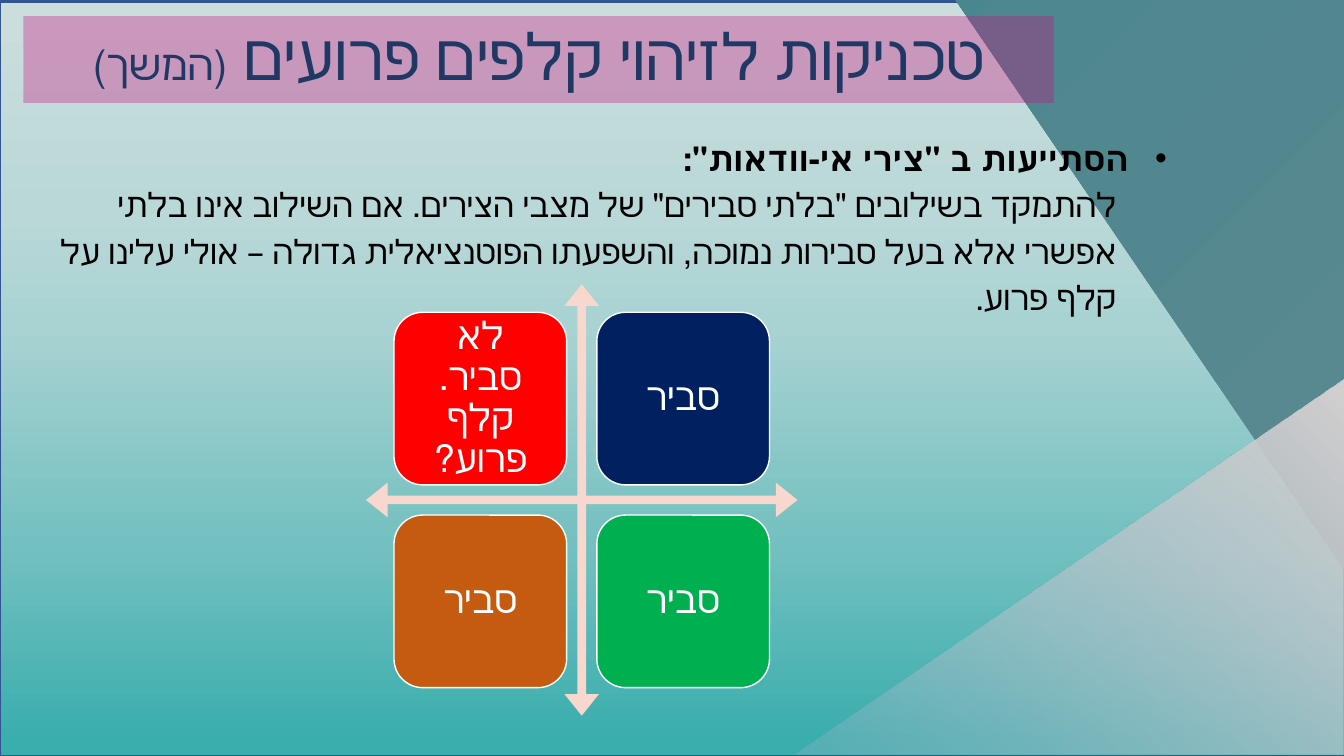
from itertools import product

from lxml.etree import SubElement
from pptx import Presentation
from pptx.dml.color import RGBColor
from pptx.enum.shapes import MSO_SHAPE
from pptx.enum.text import MSO_ANCHOR, PP_ALIGN
from pptx.oxml.ns import qn
from pptx.util import Inches, Pt

SLIDE = (0, 0, 13.33, 7.5)
COLORS = {
    "frame": "325491", "banner": "CA0C7D", "title": "203864",
    "text": "000000", "white": "FFFFFF", "arrows": "F8D7CE",
    "red": "FF0000", "navy": "002060", "orange": "C55A11", "green": "00B050",
}
PANEL_STOPS = [(2, "3AADAD"), (28, "74C0C0"), (57, "A9D2D2"), (72, "BAD8D8"), (98, "CBDDDD")]
TEAL_STOPS = [(2, "5A8890"), (95, "4F878F"), (97, "49878E")]
PALE_STOPS = [(1, "ADB9CA", 22), (97, "D0CECE")]
TILES = [("לא סביר. קלף פרוע?", "red"), ("סביר", "navy"), ("סביר", "orange"), ("סביר", "green")]


def part(box, left, top, width, height):
    """Return the box that takes the given percentages of another box."""
    x, y, w, h = box
    return (x + w * left / 100, y + h * top / 100, w * width / 100, h * height / 100)


def add_shape(page, kind, box, fill=None, line=None):
    """Add a preset shape without shadow, with optional fill and 1 pt line."""
    shape = page.shapes.add_shape(kind, *map(Inches, box))
    shape.shadow.inherit = False
    if fill:
        shape.fill.solid()
        shape.fill.fore_color.rgb = RGBColor.from_string(COLORS[fill])
    if line:
        shape.line.color.rgb = RGBColor.from_string(COLORS[line])
        shape.line.width = Pt(1)
    else:
        shape.line.fill.background()
    return shape


def set_opacity(color, percent):
    """Set the opacity of a colour element."""
    SubElement(color, qn("a:alpha")).set("val", str(percent * 1000))


def set_gradient(shape, stops, angle):
    """Fill a shape with a linear gradient, its angle measured clockwise."""
    shape.fill.gradient()
    shape.fill.gradient_angle = 360 - angle
    stop_list = shape.element.spPr.find(qn("a:gradFill")).find(qn("a:gsLst"))
    for stop in list(stop_list):
        stop_list.remove(stop)
    for position, color, *opacity in stops:
        stop = SubElement(stop_list, qn("a:gs"))
        stop.set("pos", str(position * 1000))
        value = SubElement(stop, qn("a:srgbClr"))
        value.set("val", color)
        for percent in opacity:
            set_opacity(value, percent)


def format_paragraph(para, align, spacing, margin=0, bullet=None):
    """Make a right-to-left paragraph with an optional hanging bullet."""
    properties = para._p.get_or_add_pPr()
    properties.set("rtl", "1")
    properties.set("marL", str(Inches(margin)))
    properties.set("indent", str(Inches(-margin if bullet else 0)))
    para.alignment = align
    para.line_spacing = spacing
    if bullet:
        SubElement(properties, qn("a:buFont")).set("typeface", "Arial")
        SubElement(properties, qn("a:buChar")).set("char", bullet)


def add_span(para, text, size, color, font="Calibri", bold=False):
    """Add a formatted run of text to a paragraph."""
    span = para.add_run()
    span.text = text
    span.font.size = Pt(size)
    span.font.name = font
    span.font.bold = bold
    span.font.color.rgb = RGBColor.from_string(COLORS[color])


def add_backdrop(page, box):
    """Draw the gradient panels and the two corner triangles."""
    for top in (0, 0.27):
        panel = add_shape(page, MSO_SHAPE.RECTANGLE, part(box, 0, top, 100, 99.73), line="frame")
        set_gradient(panel, PANEL_STOPS, 270)
    for area, rotation, stops in (
        ((71.1, 0, 28.96, 75.6), 180, TEAL_STOPS),
        ((65.57, 38.4, 28.06, 72.93), 270, PALE_STOPS),
    ):
        corner = add_shape(page, MSO_SHAPE.ISOSCELES_TRIANGLE, part(box, *area))
        corner.adjustments[0] = 0
        corner.rotation = rotation
        set_gradient(corner, stops, 45)


def add_title(page, box):
    """Draw the translucent title banner."""
    banner = add_shape(page, MSO_SHAPE.RECTANGLE, box, fill="banner")
    set_opacity(banner.element.spPr.find(qn("a:solidFill"))[0], 33)
    frame = banner.text_frame
    frame.word_wrap = True
    frame.vertical_anchor = MSO_ANCHOR.MIDDLE
    para = frame.paragraphs[0]
    format_paragraph(para, PP_ALIGN.CENTER, 0.9)
    add_span(para, "טכניקות לזיהוי קלפים פרועים ", 46, "title")
    add_span(para, "(המשך)", 30, "title")


def add_body(page, box):
    """Write the bulleted heading and its explanation."""
    frame = page.shapes.add_textbox(*map(Inches, box)).text_frame
    frame.word_wrap = True
    heading = frame.paragraphs[0]
    format_paragraph(heading, PP_ALIGN.RIGHT, 1.15, margin=0.38, bullet="•")
    add_span(heading, 'הסתייעות ב "צירי אי-וודאות": ', 24, "text", "Times New Roman", bold=True)
    detail = frame.add_paragraph()
    format_paragraph(detail, PP_ALIGN.RIGHT, 1.15, margin=0.5)
    add_span(
        detail,
        'להתמקד בשילובים "בלתי סבירים" של מצבי הצירים. אם השילוב אינו בלתי אפשרי '
        "אלא בעל סבירות נמוכה, והשפעתו הפוטנציאלית גדולה – אולי עלינו על קלף פרוע.",
        24, "text", "Times New Roman",
    )


def add_matrix(page, box):
    """Draw the crossed axes with a tile in each quadrant."""
    axes = add_shape(page, MSO_SHAPE.QUAD_ARROW, box, fill="arrows")
    for index, value in enumerate((0.02, 0.04, 0.05)):
        axes.adjustments[index] = value
    for (row, column), (text, color) in zip(product(range(2), repeat=2), TILES):
        area = part(box, 6.5 + 47 * column, 6.5 + 47 * row, 40, 40)
        tile = add_shape(page, MSO_SHAPE.ROUNDED_RECTANGLE, area, fill=color, line="white")
        frame = tile.text_frame
        frame.word_wrap = True
        frame.vertical_anchor = MSO_ANCHOR.MIDDLE
        frame.margin_left = frame.margin_right = Inches(0.11)
        frame.margin_top = frame.margin_bottom = Inches(0.11)
        para = frame.paragraphs[0]
        format_paragraph(para, PP_ALIGN.CENTER, 0.9)
        add_span(para, text, 27, "white")


def main():
    """Build the slide and save the deck."""
    deck = Presentation()
    deck.slide_width, deck.slide_height = map(Inches, SLIDE[2:])
    page = deck.slides.add_slide(deck.slide_layouts[6])
    add_backdrop(page, SLIDE)
    add_title(page, part(SLIDE, 1.73, 2.13, 76.67, 11.47))
    add_body(page, part(SLIDE, 1.13, 16.8, 86.42, 19.87))
    add_matrix(page, part(SLIDE, 27.23, 37.6, 32.11, 57.07))
    deck.save("out.pptx")


if __name__ == "__main__":
    main()
